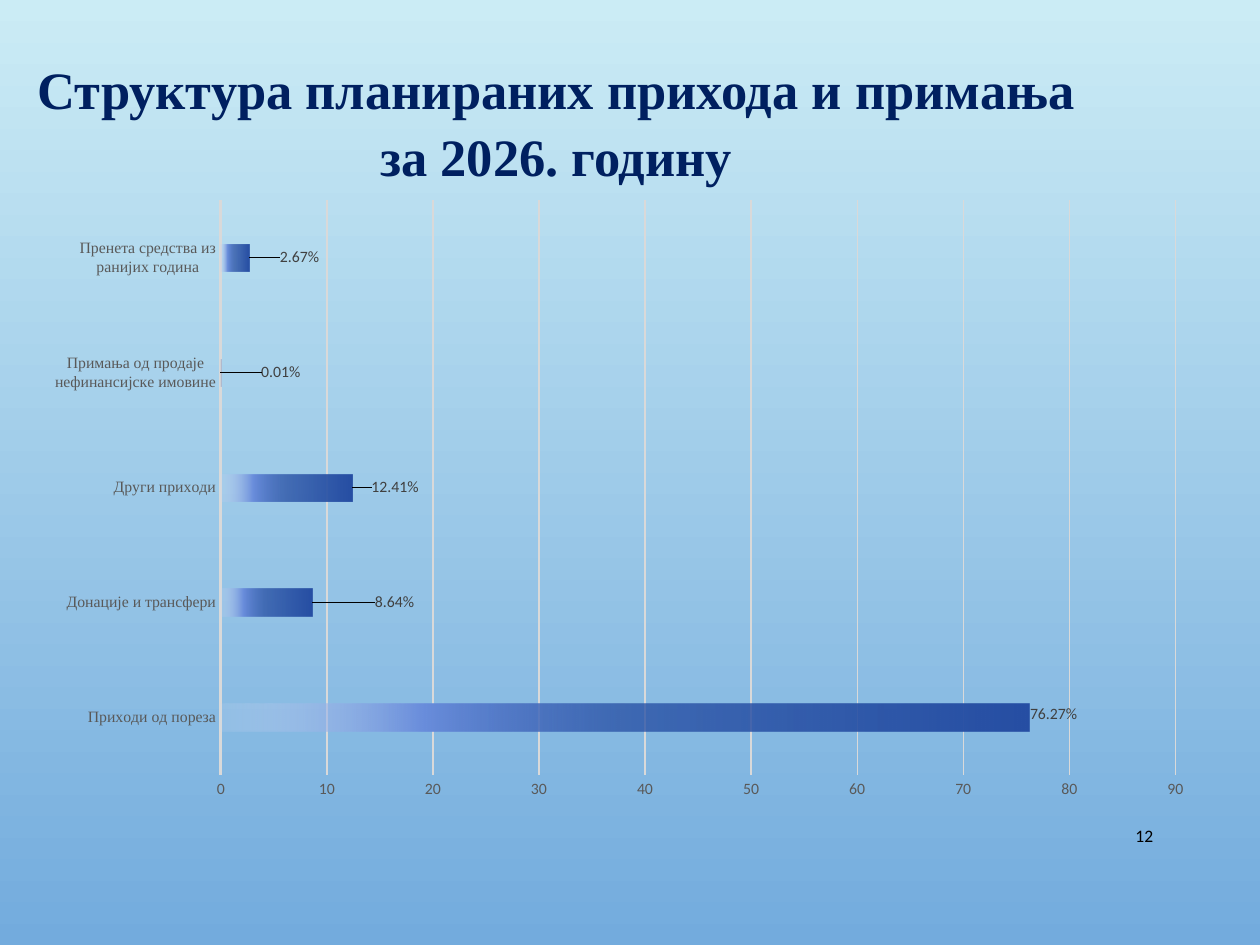
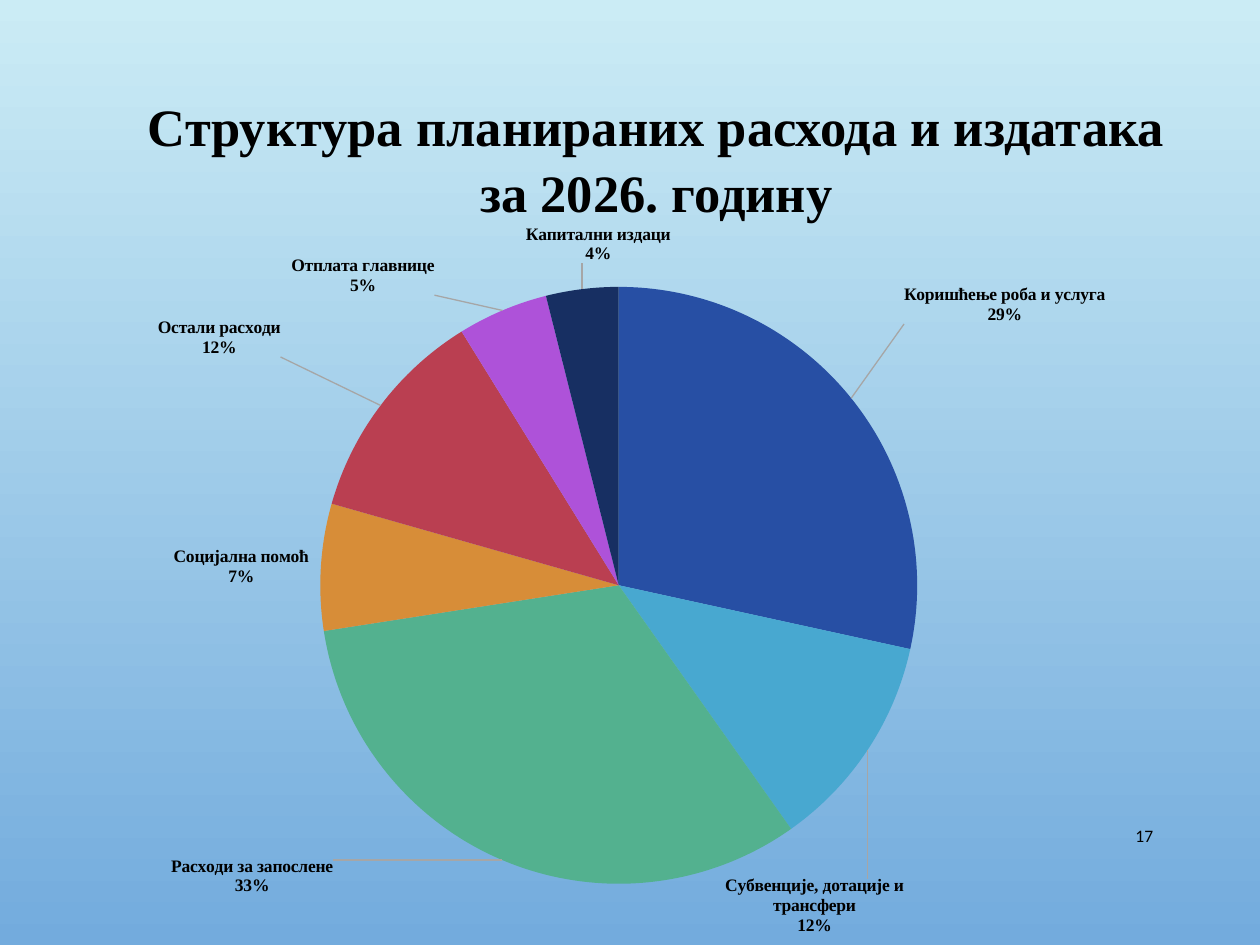
import copy
from dataclasses import dataclass

import lxml.etree
import pptx
import pptx.chart.data
import pptx.dml.color
import pptx.enum.chart
import pptx.enum.text
import pptx.oxml
import pptx.oxml.ns
import pptx.util

Pt = pptx.util.Pt
RGB = pptx.dml.color.RGBColor.from_string
qn = pptx.oxml.ns.qn
NS = pptx.oxml.ns.nsdecls("c", "a")
XL = pptx.enum.chart
TX = pptx.enum.text


@dataclass(frozen=True)
class Theme:
    sky: str = "CBECF5"
    blue: str = "73ABDD"
    navy: str = "002060"
    black: str = "000000"
    axis_text: str = "595959"
    label_text: str = "404040"
    grid: str = "D9D9D9"
    leader: str = "A6A6A6"
    serif: str = "Times New Roman"
    sans: str = "Calibri"
    title_size: int = 30
    body_size: int = 10
    axis_size: int = 9
    # (position %, colour, opacity %)
    bar_stops: tuple = ((0, "274FA4", 100), (51, "274FA4", 75),
                        (75, "6A8EDC", 100), (100, "CDD9F3", 15))
    slices: tuple = ("274FA4", "48A8D0", "53B18F", "D78D38",
                     "BA3F51", "AE52D9", "172F62")


T = Theme()


@dataclass(frozen=True)
class Box:
    """A place on the slide, in points."""
    left: float
    top: float
    width: float
    height: float

    def emu(self) -> tuple:
        return tuple(Pt(v) for v in (self.left, self.top, self.width, self.height))


@dataclass(frozen=True)
class Item:
    """A charted value; dx and dy move its label, in points."""
    name: str
    value: float
    dx: float = 0
    dy: float = 0


NUMBER_BOX = Box(620.6, 463, 45.4, 28.8)

INCOME = (
    Item("Приходи од пореза", 76.27, -3, -2),
    Item("Донације и трансфери", 8.64, 33),
    Item("Други приходи", 12.41, 8),
    Item("Примања од продаје нефинансијске имовине", 0.01, 20),
    Item("Пренета средства из ранијих година", 2.67, 15),
)
EXPENSES = (
    Item("Коришћење роба и услуга", 29, 27, -40),
    Item("Субвенције, дотације и трансфери", 12, -85, 71),
    Item("Расходи за запослене", 33, -95, -6),
    Item("Социјална помоћ", 7, -3),
    Item("Остали расходи", 12, -54, -25),
    Item("Отплата главнице", 5, -37, -5),
    Item("Капитални издаци", 4, 51, -11),
)


def apply(obj, formats: dict) -> None:
    for name, value in formats.items():
        setattr(obj, name, value)


def set_font(font, size: float, name: str, color: str, bold: bool = False) -> None:
    apply(font, {"size": Pt(size), "name": name, "bold": bold})
    font.color.rgb = RGB(color)


def set_background(master) -> None:
    fill = master.background.fill
    fill.gradient()
    fill.gradient_angle = 270
    for stop, color, position in zip(fill.gradient_stops, (T.sky, T.blue), (0, 1)):
        stop.color.rgb = RGB(color)
        stop.position = position


def add_slide(prs, title: str, box: Box, color: str, number: str):
    """Add a slide with its title and page number."""
    s = prs.slides.add_slide(prs.slide_layouts[5])
    sp = s.shapes.title
    apply(sp, dict(zip(("left", "top", "width", "height"), box.emu())))
    tf = sp.text_frame
    tf.text = title
    apply(tf, {"word_wrap": True, "auto_size": TX.MSO_AUTO_SIZE.NONE,
               "vertical_anchor": TX.MSO_ANCHOR.TOP})
    p = tf.paragraphs[0]
    apply(p, {"alignment": TX.PP_ALIGN.CENTER, "line_spacing": 1.05})
    set_font(p.runs[0].font, T.title_size, T.serif, color, True)

    tf = s.shapes.add_textbox(*NUMBER_BOX.emu()).text_frame
    tf.text = number
    apply(tf, {"word_wrap": True, "vertical_anchor": TX.MSO_ANCHOR.MIDDLE})
    p = tf.paragraphs[0]
    p.alignment = TX.PP_ALIGN.RIGHT
    set_font(p.runs[0].font, T.body_size, T.sans, T.black)
    return s


def layout_xml(x: float, y: float, w: float = 0, h: float = 0):
    """A manual layout: a plot area if it has a size, else a label offset."""
    modes = '<c:xMode val="edge"/><c:yMode val="edge"/>' if w else ""
    target = '<c:layoutTarget val="inner"/>' if w else ""
    size = f'<c:w val="{w:.3f}"/><c:h val="{h:.3f}"/>' if w else ""
    return pptx.oxml.parse_xml(
        f'<c:layout {NS}><c:manualLayout>{target}{modes}'
        f'<c:x val="{x:.3f}"/><c:y val="{y:.3f}"/>{size}</c:manualLayout></c:layout>')


def add_chart(s, kind, box: Box, items: tuple, plot: tuple):
    data = pptx.chart.data.CategoryChartData()
    data.categories = [i.name for i in items]
    data.add_series("Series 1", [i.value for i in items])
    chart = s.shapes.add_chart(kind, *box.emu(), data).chart
    apply(chart, {"has_title": False, "has_legend": False})
    set_font(chart.font, T.body_size, T.sans, T.black)
    chart.plots[0].vary_by_categories = kind == XL.XL_CHART_TYPE.PIE
    area = chart.plots[0]._element.getparent()
    for old in area.findall(qn("c:layout")):
        area.remove(old)
    area.insert(0, layout_xml(*plot))
    return chart


def place_labels(series, items: tuple, box: Box) -> None:
    """Give each point the series label format and its own offset."""
    labels = series.data_labels._element
    shared = [e for e in labels if e.tag not in
              (qn("c:showLeaderLines"), qn("c:leaderLines"))]
    for n, item in enumerate(items):
        label = lxml.etree.Element(qn("c:dLbl"))
        lxml.etree.SubElement(label, qn("c:idx")).set("val", str(n))
        label.append(layout_xml(item.dx / box.width, item.dy / box.height))
        label.extend(copy.deepcopy(e) for e in shared)
        labels.insert(n, label)


def fill_bars(series) -> None:
    series.format.fill.solid()
    pr = series._element.find(qn("c:spPr"))
    stops = "".join(
        f'<a:gs pos="{pos * 1000}"><a:srgbClr val="{color}">'
        f'<a:alpha val="{alpha * 1000}"/></a:srgbClr></a:gs>'
        for pos, color, alpha in T.bar_stops)
    pr.replace(pr[0], pptx.oxml.parse_xml(
        f'<a:gradFill {NS}><a:gsLst>{stops}</a:gsLst>'
        '<a:lin ang="10800000" scaled="0"/></a:gradFill>'))


def add_income_chart(s) -> None:
    box = Box(18, 107.3, 671.8, 355.7)
    chart = add_chart(s, XL.XL_CHART_TYPE.BAR_CLUSTERED, box, INCOME,
                      (0.161, 0.02, 0.812, 0.924))
    chart.plots[0].gap_width = 326
    cat, val = chart.category_axis, chart.value_axis
    for axis, font in ((cat, T.serif), (val, T.sans)):
        apply(axis, {"major_tick_mark": XL.XL_TICK_MARK.NONE,
                     "minor_tick_mark": XL.XL_TICK_MARK.NONE})
        set_font(axis.tick_labels.font, T.axis_size, font, T.axis_text)
    apply(val, {"minimum_scale": 0, "maximum_scale": 90, "major_unit": 10})
    apply(val.tick_labels, {"number_format": "0", "number_format_is_linked": False})
    val.format.line.fill.background()
    for line, width in ((cat.format.line, 1.5), (val.major_gridlines.format.line, 0.75)):
        line.color.rgb = RGB(T.grid)
        line.width = Pt(width)

    series = chart.plots[0].series[0]
    series.invert_if_negative = False
    fill_bars(series)
    labels = series.data_labels
    apply(labels, {"show_value": True, "number_format": '0.00"%"',
                   "number_format_is_linked": False,
                   "position": XL.XL_LABEL_POSITION.OUTSIDE_END})
    set_font(labels.font, T.axis_size, T.sans, T.label_text)
    for e in labels._element.findall(qn("c:showLeaderLines")):
        labels._element.remove(e)
    place_labels(series, INCOME, box)


def add_expense_chart(s) -> None:
    box = Box(18, 128.2, 689.8, 406.1)
    chart = add_chart(s, XL.XL_CHART_TYPE.PIE, box, EXPENSES,
                      (0.239, 0.088, 0.495, 0.84))
    series = chart.plots[0].series[0]
    for n, color in enumerate(T.slices):
        fill = series.points[n].format.fill
        fill.solid()
        fill.fore_color.rgb = RGB(color)

    labels = series.data_labels
    apply(labels, {"show_value": True, "show_category_name": True,
                   "show_percentage": False, "number_format": '0"%"',
                   "number_format_is_linked": False,
                   "position": XL.XL_LABEL_POSITION.OUTSIDE_END})
    set_font(labels.font, T.body_size, T.serif, T.black, True)
    el = labels._element
    for e in el.findall(qn("c:showLeaderLines")):
        el.remove(e)
    separator = lxml.etree.SubElement(el, qn("c:separator"))
    separator.text = "\n"
    lxml.etree.SubElement(el, qn("c:showLeaderLines")).set("val", "1")
    el.append(pptx.oxml.parse_xml(
        f'<c:leaderLines {NS}><c:spPr><a:ln w="9525"><a:solidFill>'
        f'<a:srgbClr val="{T.leader}"/></a:solidFill></a:ln></c:spPr></c:leaderLines>'))
    place_labels(series, EXPENSES, box)


def main() -> None:
    prs = pptx.Presentation()
    apply(prs, {"slide_width": Pt(720), "slide_height": Pt(540)})
    set_background(prs.slide_master)
    add_income_chart(add_slide(
        prs, "Структура планираних прихода и примања за 2026. годину",
        Box(2.9, 27.4, 630, 80), T.navy, "12"))
    add_expense_chart(add_slide(
        prs, "Структура планираних расхода и издатака за 2026. годину",
        Box(66.2, 48.2, 617.8, 80), T.black, "17"))
    prs.save("out.pptx")


if __name__ == "__main__":
    main()
